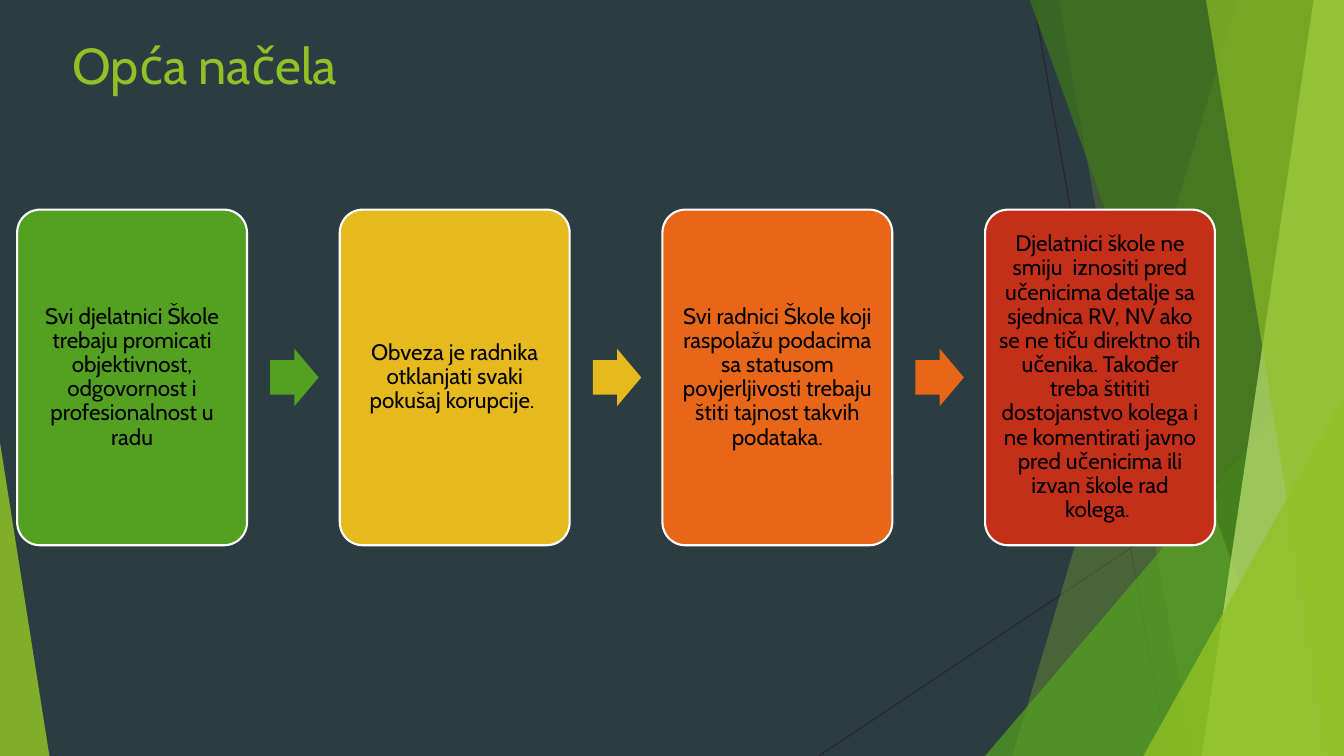
from lxml import etree
from pptx import Presentation
from pptx import util as u
from pptx.dml.color import RGBColor
from pptx.enum import shapes, text
from pptx.oxml.ns import qn

FONT = "Cabin"
TITLE = "Opća načela"
WIDE, HIGH = 13.33, 7.5
TOP = -0.01

RAYS = [(10.25, 0, 11.58, HIGH), (WIDE, 4.03, 8.12, HIGH)]

# Bands run to the right edge: top x, bottom x, colour, opacity in percent
# Peaks are triangles: left, top, width, apex (0 left, 1 right), colour, opacity
FACETS = [
    ("band", (12.28, 10.04), "90C226", 30),
    ("band", (10.5, 11.83), "90C226", 20),
    ("peak", (9.77, 3.33, 3.56, 1), "54A021", 72),
    ("band", (10.21, 12.91), "3F7819", 70),
    ("band", (13.03, 11.92), "C0E474", 70),
    ("band", (11.96, 13.18), "90C226", 65),
    ("peak", (11.34, 3.93, 1.99, 1), "90C226", 80),
    ("peak", (0, 4.39, 0.49, 0), "90C226", 85),
]

CARDS = [
    ("54A021", "Svi djelatnici Škole trebaju promicati objektivnost, "
               "odgovornost i profesionalnost u radu"),
    ("E6B91E", "Obveza je radnika otklanjati svaki pokušaj korupcije. "),
    ("E76618", "Svi radnici Škole koji raspolažu podacima sa statusom "
               "povjerljivosti trebaju štiti tajnost takvih podataka."),
    ("C42F1A", "Djelatnici škole ne smiju  iznositi pred učenicima detalje sa "
               "sjednica RV, NV ako se ne tiču direktno tih učenika. Također "
               "treba štititi dostojanstvo kolega i ne komentirati javno pred "
               "učenicima ili izvan škole rad kolega. "),
]
LEFT, STEP = 0.17, 3.2
CARD_TOP, CARD_W, CARD_H = 2.08, 2.28, 3.33
ARROW_GAP, ARROW_W, ARROW_H = 0.23, 0.48, 0.57
PAD = 0.07


def rgb(code):
    return RGBColor.from_string(code)


def put(target, values):
    for name, value in values.items():
        setattr(target, name, value)


def paint(shape, color, alpha=100):
    """Give a flat fill of the given opacity, with no line or shadow."""
    shape.shadow.inherit = False
    shape.fill.solid()
    shape.fill.fore_color.rgb = rgb(color)
    shape.line.fill.background()
    if alpha < 100:
        tint = shape.fill._xPr.find(".//" + qn("a:srgbClr"))
        etree.SubElement(tint, qn("a:alpha"), val=str(alpha * 1000))


def add(slide, kind, box, adjust):
    shape = slide.shapes.add_shape(kind, *map(u.Inches, box))
    for index, value in enumerate(adjust):
        shape.adjustments[index] = value
    return shape


def write(shape, words, size, color, frame, para):
    put(shape.text_frame, frame)
    line = shape.text_frame.paragraphs[0]
    put(line, para)
    run = line.add_run()
    run.text = words
    put(run.font, {"name": FONT, "size": u.Pt(size)})
    run.font.color.rgb = rgb(color)


def add_ray(slide, ends):
    ray = slide.shapes.add_connector(
        shapes.MSO_CONNECTOR.STRAIGHT, *map(u.Inches, ends))
    ray.line.color.rgb = rgb("262626")
    ray.line.width = u.Pt(0.75)
    etree.SubElement(ray._element.spPr, qn("a:effectLst"))


def add_band(slide, top_x, low_x):
    spots = [(WIDE, TOP), (WIDE, HIGH), (low_x, HIGH)]
    pen = slide.shapes.build_freeform(u.Inches(top_x), u.Inches(TOP))
    pen.add_line_segments([(u.Inches(x), u.Inches(y)) for x, y in spots])
    return pen.convert_to_shape()


def add_peak(slide, left, top, width, apex):
    return add(slide, shapes.MSO_SHAPE.ISOSCELES_TRIANGLE,
               (left, top, width, HIGH - top), [apex])


def add_title(slide):
    title = slide.shapes.title
    put(title, {"left": u.Inches(0.62), "top": u.Inches(0.29),
                "width": u.Inches(9.4), "height": u.Inches(1.44)})
    write(title, TITLE, 36, "90C226",
          {"vertical_anchor": text.MSO_ANCHOR.TOP,
           "auto_size": text.MSO_AUTO_SIZE.NONE},
          {"alignment": text.PP_ALIGN.LEFT})


def add_card(slide, left, color, words):
    card = add(slide, shapes.MSO_SHAPE.ROUNDED_RECTANGLE,
               (left, CARD_TOP, CARD_W, CARD_H), [0.1])
    paint(card, color)
    card.line.color.rgb = rgb("FFFFFF")
    card.line.width = u.Pt(1.5)
    frame = {"margin_" + side: u.Inches(PAD)
             for side in ("left", "top", "right", "bottom")}
    frame.update(word_wrap=True, vertical_anchor=text.MSO_ANCHOR.MIDDLE)
    write(card, words, 16, "000000", frame,
          {"alignment": text.PP_ALIGN.CENTER, "line_spacing": 0.9})


def main():
    deck = Presentation()
    put(deck, {"slide_width": u.Inches(WIDE), "slide_height": u.Inches(HIGH)})
    slide = deck.slides.add_slide(deck.slide_layouts[5])
    slide.background.fill.solid()
    slide.background.fill.fore_color.rgb = rgb("2C3C43")

    for ends in RAYS:
        add_ray(slide, ends)
    makers = {"band": add_band, "peak": add_peak}
    for kind, place, color, alpha in FACETS:
        paint(makers[kind](slide, *place), color, alpha)
    add_title(slide)

    arrow_top = CARD_TOP + (CARD_H - ARROW_H) / 2
    for index, (color, words) in enumerate(CARDS):
        left = LEFT + index * STEP
        add_card(slide, left, color, words)
        if index < len(CARDS) - 1:
            box = (left + CARD_W + ARROW_GAP, arrow_top, ARROW_W, ARROW_H)
            paint(add(slide, shapes.MSO_SHAPE.RIGHT_ARROW, box, [0.6, 0.5]),
                  color)
    deck.save("out.pptx")


if __name__ == "__main__":
    main()
